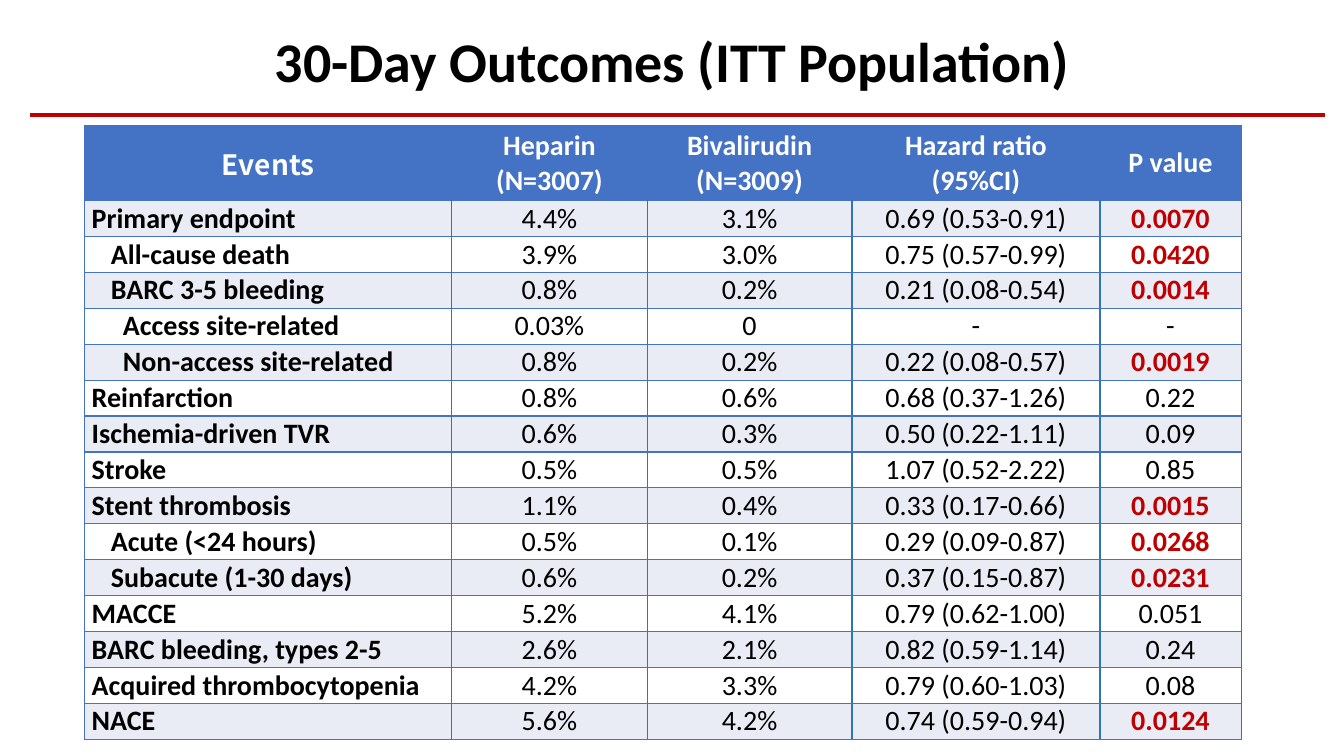
from lxml.etree import SubElement
from pptx import Presentation
from pptx.dml.color import RGBColor
from pptx.enum.shapes import MSO_CONNECTOR
from pptx.enum.text import MSO_ANCHOR, PP_ALIGN
from pptx.oxml.ns import qn
from pptx.util import Inches, Pt

COLORS = {
    "black": "000000",
    "white": "FFFFFF",
    "red": "C00000",
    "blue": "4472C4",
    "side": "2E75B6",
    "band": "E9EBF5",
}
FONT = "Calibri"

# The slide is a grid of 133.3 columns by 75 rows
GRID_COLUMNS, GRID_ROWS = 133.3, 75
STEP = Inches(0.1)

COLUMN_WIDTHS = [36.4, 19.4, 20.3, 24.6, 14]
HEADER_HEIGHT, TABLE_HEIGHT = 7.4, 60.9
INDENTS = [0, 1.9, 3.1]

HEADINGS = ["Events", "Heparin\n(N=3007)", "Bivalirudin\n(N=3009)",
            "Hazard ratio\n(95%CI)", "P value"]

# Indent level, event, heparin, bivalirudin, hazard ratio, P value
OUTCOMES = [
    (0, "Primary endpoint", "4.4%", "3.1%", "0.69 (0.53-0.91)", "0.0070"),
    (1, "All-cause death", "3.9%", "3.0%", "0.75 (0.57-0.99)", "0.0420"),
    (1, "BARC 3-5 bleeding", "0.8%", "0.2%", "0.21 (0.08-0.54)", "0.0014"),
    (2, "Access site-related", "0.03%", "0", "-", "-"),
    (2, "Non-access site-related", "0.8%", "0.2%", "0.22 (0.08-0.57)", "0.0019"),
    (0, "Reinfarction", "0.8%", "0.6%", "0.68 (0.37-1.26)", "0.22"),
    (0, "Ischemia-driven TVR", "0.6%", "0.3%", "0.50 (0.22-1.11)", "0.09"),
    (0, "Stroke", "0.5%", "0.5%", "1.07 (0.52-2.22)", "0.85"),
    (0, "Stent thrombosis", "1.1%", "0.4%", "0.33 (0.17-0.66)", "0.0015"),
    (1, "Acute (<24 hours)", "0.5%", "0.1%", "0.29 (0.09-0.87)", "0.0268"),
    (1, "Subacute (1-30 days)", "0.6%", "0.2%", "0.37 (0.15-0.87)", "0.0231"),
    (0, "MACCE", "5.2%", "4.1%", "0.79 (0.62-1.00)", "0.051"),
    (0, "BARC bleeding, types 2-5", "2.6%", "2.1%", "0.82 (0.59-1.14)", "0.24"),
    (0, "Acquired thrombocytopenia", "4.2%", "3.3%", "0.79 (0.60-1.03)", "0.08"),
    (0, "NACE", "5.6%", "4.2%", "0.74 (0.59-0.94)", "0.0124"),
]


def grid(*counts):
    return [round(count * STEP) for count in counts]


def rgb(name):
    return RGBColor.from_string(COLORS[name])


def set_all(target, values):
    for name, value in values.items():
        setattr(target, name, value)


def write(para, text, color, size=20, bold=True, font=FONT, **layout):
    para.text = text
    set_all(para, layout)
    for span in para.runs:
        set_all(span.font, {"size": Pt(size), "bold": bold, "name": font})
        span.font.color.rgb = rgb(color)


def add_title(page, text):
    box = page.shapes.add_textbox(*grid(16.2, 2.1, 100.9, 7.7))
    box.text_frame.word_wrap = True
    write(box.text_frame.paragraphs[0], text, "black", 40,
          alignment=PP_ALIGN.CENTER)


def add_rule(page):
    rule = page.shapes.add_connector(MSO_CONNECTOR.STRAIGHT,
                                     *grid(3, 11.4, 131.4, 11.4))
    rule.line.color.rgb = rgb("red")
    rule.line.width = Pt(3)
    SubElement(rule._element.spPr, qn("a:effectLst"))


def format_cell(cell, fill, sides):
    left, right = grid(0.7, 0.7)
    set_all(cell, {"margin_left": left, "margin_right": right, "margin_top": 0,
                   "margin_bottom": 0, "vertical_anchor": MSO_ANCHOR.MIDDLE})
    # Borders come before the fill in the cell's properties
    properties = cell._tc.get_or_add_tcPr()
    for tag, color in zip(("lnL", "lnR", "lnT", "lnB"), (*sides, "blue", "blue")):
        edge = SubElement(properties, qn("a:" + tag), w=str(Pt(1)))
        paint = SubElement(edge, qn("a:solidFill"))
        SubElement(paint, qn("a:srgbClr"), val=COLORS[color])
    cell.fill.solid()
    cell.fill.fore_color.rgb = rgb(fill)


def fill_header(table):
    for column, heading in enumerate(HEADINGS):
        cell = table.cell(0, column)
        format_cell(cell, "blue", ("blue", "blue"))
        write(cell.text_frame.paragraphs[0], heading, "white",
              font=FONT if column else "Noto Sans CJK SC",
              alignment=PP_ALIGN.CENTER)


def fill_outcome(table, row, level, values):
    for column, text in enumerate(values):
        cell = table.cell(row, column)
        format_cell(cell, "band" if row % 2 else "white",
                    ("side" if column else "blue", "side"))
        # P values below 0.05 stand out
        significant = column == 4 and text != "-" and float(text) < 0.05
        para = cell.text_frame.paragraphs[0]
        write(para, text, "red" if significant else "black",
              bold=column == 0 or significant,
              alignment=PP_ALIGN.CENTER if column else PP_ALIGN.LEFT,
              space_before=Pt(2.4), space_after=Pt(2.4))
        if column == 0 and level:
            para._p.get_or_add_pPr().set("marL", str(grid(INDENTS[level])[0]))


def add_outcomes(page):
    frame = page.shapes.add_table(
        len(OUTCOMES) + 1, len(HEADINGS),
        *grid(8.4, 12.5, sum(COLUMN_WIDTHS), TABLE_HEIGHT))
    table = frame.table
    set_all(table, {"first_row": False, "horz_banding": False})
    for column, width in zip(table.columns, grid(*COLUMN_WIDTHS)):
        column.width = width
    row_height = (TABLE_HEIGHT - HEADER_HEIGHT) / len(OUTCOMES)
    heights = [HEADER_HEIGHT] + [row_height] * len(OUTCOMES)
    for row, height in zip(table.rows, grid(*heights)):
        row.height = height
    fill_header(table)
    for row, (level, *values) in enumerate(OUTCOMES, start=1):
        fill_outcome(table, row, level, values)


def main():
    deck = Presentation()
    deck.slide_width, deck.slide_height = grid(GRID_COLUMNS, GRID_ROWS)
    page = deck.slides.add_slide(deck.slide_layouts[6])
    add_rule(page)
    add_title(page, "30-Day Outcomes (ITT Population)")
    add_outcomes(page)
    deck.save("out.pptx")


if __name__ == "__main__":
    main()
